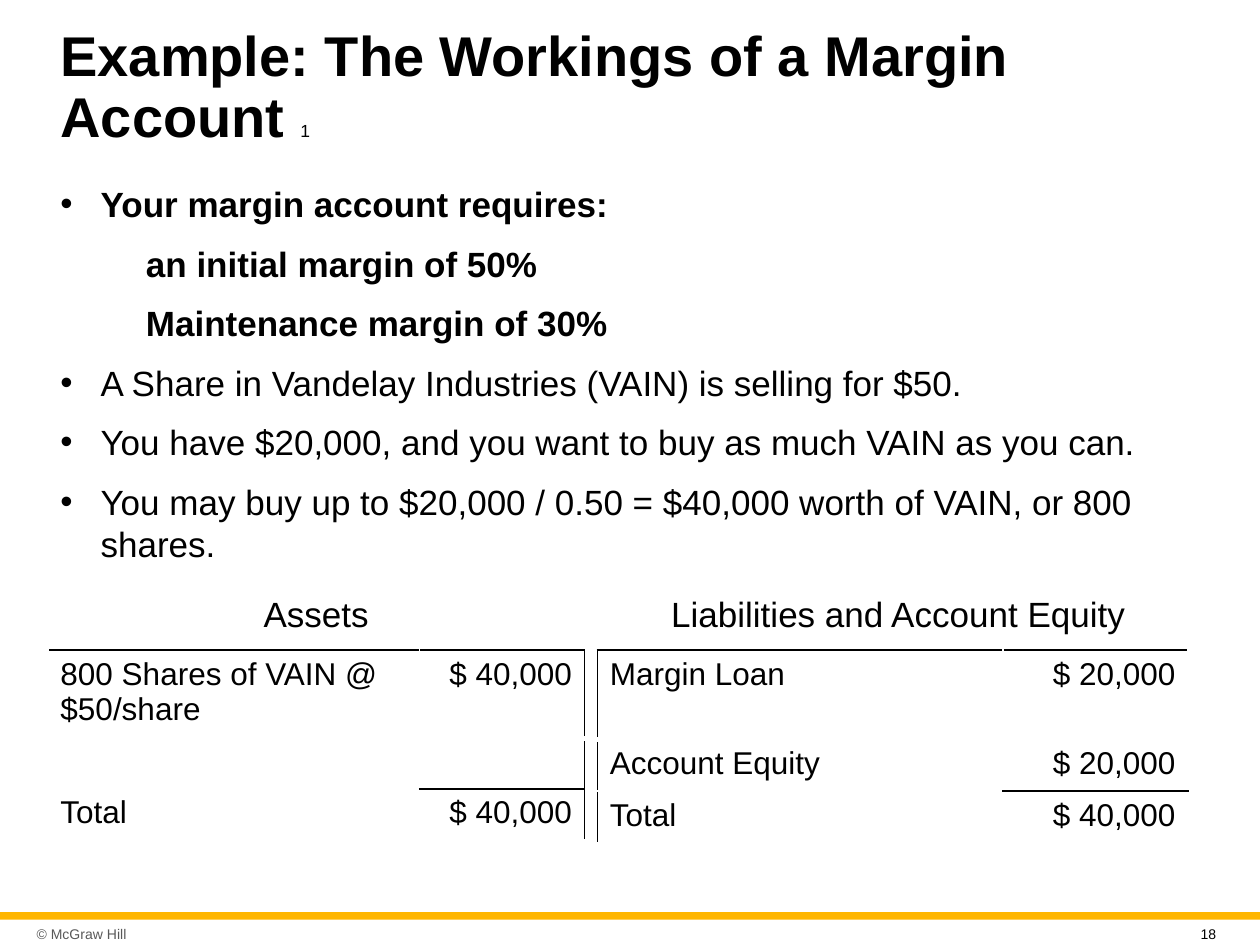
"""Build a slide on how a margin account works."""
from lxml.etree import SubElement
from pptx import Presentation
from pptx.dml.color import RGBColor
from pptx.enum.shapes import MSO_SHAPE
from pptx.enum.text import MSO_ANCHOR, MSO_AUTO_SIZE, PP_ALIGN
from pptx.oxml.ns import qn
from pptx.util import Inches, Pt

COLORS = {"text": "000000", "page": "FFFFFF", "band": "FFB600", "notice": "595959"}


def color(name):
    return RGBColor.from_string(COLORS[name])


def write(para, text, size=20, bold=False, ink="text", align=PP_ALIGN.LEFT):
    para.alignment = align
    span = para.add_run()
    span.text = text
    font = span.font
    font.name, font.size, font.bold = "Arial", Pt(size), bold
    font.color.rgb = color(ink)


def indent(para, margin, first, bullet=None):
    props = para._p.get_or_add_pPr()
    props.set("marL", str(Inches(margin)))
    props.set("indent", str(Inches(first)))
    if bullet:
        SubElement(props, qn("a:buFont"), typeface="Arial")
        SubElement(props, qn("a:buChar"), char=bullet)
    else:
        SubElement(props, qn("a:buNone"))


def border(cell, side, ink, width=1):
    line = SubElement(cell._tc.get_or_add_tcPr(), qn(f"a:ln{side}"), w=str(Pt(width)))
    fill = SubElement(line, qn("a:solidFill"))
    SubElement(fill, qn("a:srgbClr"), val=COLORS[ink])


class MarginSlide:
    def __init__(self, deck):
        self.page = deck.slides.add_slide(deck.slide_layouts[5])

    def place(self, shape, left, top, width, height):
        shape.left, shape.top = Inches(left), Inches(top)
        shape.width, shape.height = Inches(width), Inches(height)

    def title(self, text, number):
        box = self.page.shapes.title
        self.place(box, 0.38, 0.21, 9.25, 0.99)
        frame = box.text_frame
        frame.word_wrap, frame.auto_size = True, MSO_AUTO_SIZE.NONE
        frame.vertical_anchor = MSO_ANCHOR.MIDDLE
        para = frame.paragraphs[0]
        para.line_spacing = 0.9
        write(para, text, size=32, bold=True)
        write(para, number, size=10)

    def band(self, left, top, width, height):
        shape = self.page.shapes.add_shape(
            MSO_SHAPE.RECTANGLE, Inches(left), Inches(top), Inches(width), Inches(height))
        shape.shadow.inherit = False
        shape.fill.solid()
        shape.fill.fore_color.rgb = color("band")
        shape.line.fill.background()

    def frame(self, left, top, width, height):
        box = self.page.shapes.add_textbox(
            Inches(left), Inches(top), Inches(width), Inches(height))
        box.text_frame.word_wrap = True
        return box.text_frame

    def label(self, text, place, inset=0.1, anchor=MSO_ANCHOR.TOP, **style):
        frame = self.frame(*place)
        frame.margin_left = frame.margin_right = Inches(inset)
        frame.vertical_anchor = anchor
        write(frame.paragraphs[0], text, **style)

    def points(self, items, place):
        frame = self.frame(*place)
        for index, (text, bulleted, bold) in enumerate(items):
            para = frame.add_paragraph() if index else frame.paragraphs[0]
            if bulleted:
                indent(para, 0.32, -0.32, "•")
            else:
                indent(para, 0, 0.68)
            if index:
                para.space_before = Pt(10)
            write(para, text, bold=bold)

    def account(self, rows, left, widths, heights, rule):
        """Draw one side of the account, with rule giving the column and side of its black line."""
        shape = self.page.shapes.add_table(
            len(rows), len(widths), Inches(left), Inches(5.16),
            Inches(sum(widths)), Inches(sum(heights)))
        table = shape.table
        table.first_row = table.horz_banding = False
        for column, width in zip(table.columns, widths):
            column.width = Inches(width)
        for row, height in zip(table.rows, heights):
            row.height = Inches(height)
        for r, values in enumerate(rows):
            for c, value in enumerate(values):
                cell = table.cell(r, c)
                black = {rule[1]} if c == rule[0] else set()
                if r == 0 or (r == 2 and c == 1):
                    black.add("T")
                if r == 1 and c == 1:
                    black.add("B")
                for side in "LRTB":
                    border(cell, side, "text" if side in black else "page",
                           3 if r == 0 and side == "B" else 1)
                cell.fill.solid()
                cell.fill.fore_color.rgb = color("page")
                if value:
                    write(cell.text_frame.paragraphs[0], value, size=18,
                          align=PP_ALIGN.RIGHT if c else PP_ALIGN.LEFT)


def main():
    deck = Presentation()
    deck.slide_width, deck.slide_height = Inches(10), Inches(7.5)
    slide = MarginSlide(deck)
    slide.band(0, 7.24, 10, 0.06)
    slide.label("© McGraw Hill", (0.24, 7.29, 1.35, 0.24), inset=0.05,
                anchor=MSO_ANCHOR.MIDDLE, size=8, ink="notice")
    slide.title("Example: The Workings of a Margin Account ", "1")
    slide.points([
        ("Your margin account requires:", True, True),
        ("an initial margin of 50%", False, True),
        ("Maintenance margin of 30%", False, True),
        ("A Share in Vandelay Industries (VAIN) is selling for $50.", True, False),
        ("You have $20,000, and you want to buy as much VAIN as you can.", True, False),
        ("You may buy up to $20,000 / 0.50 = $40,000 worth of VAIN, or 800 shares.", True, False),
    ], (0.38, 1.4, 9.25, 3.14))
    slide.label("Assets", (0.38, 4.65, 4.26, 0.44), align=PP_ALIGN.CENTER)
    slide.account([("800 Shares of VAIN @ $50/share", "$ 40,000"), ("", ""),
                   ("Total", "$ 40,000")], 0.38, (2.95, 1.31), (0.68, 0.4, 0.4), (1, "R"))
    slide.label("Liabilities and Account Equity", (4.78, 4.65, 4.7, 0.41),
                align=PP_ALIGN.CENTER)
    slide.account([("Margin Loan", "$ 20,000"), ("Account Equity", "$ 20,000"),
                   ("Total", "$ 40,000")], 4.74, (3.22, 1.47), (0.71, 0.41, 0.41), (0, "L"))
    slide.label("18", (9.43, 7.3, 0.39, 0.18), size=8)
    deck.save("out.pptx")


if __name__ == "__main__":
    main()
